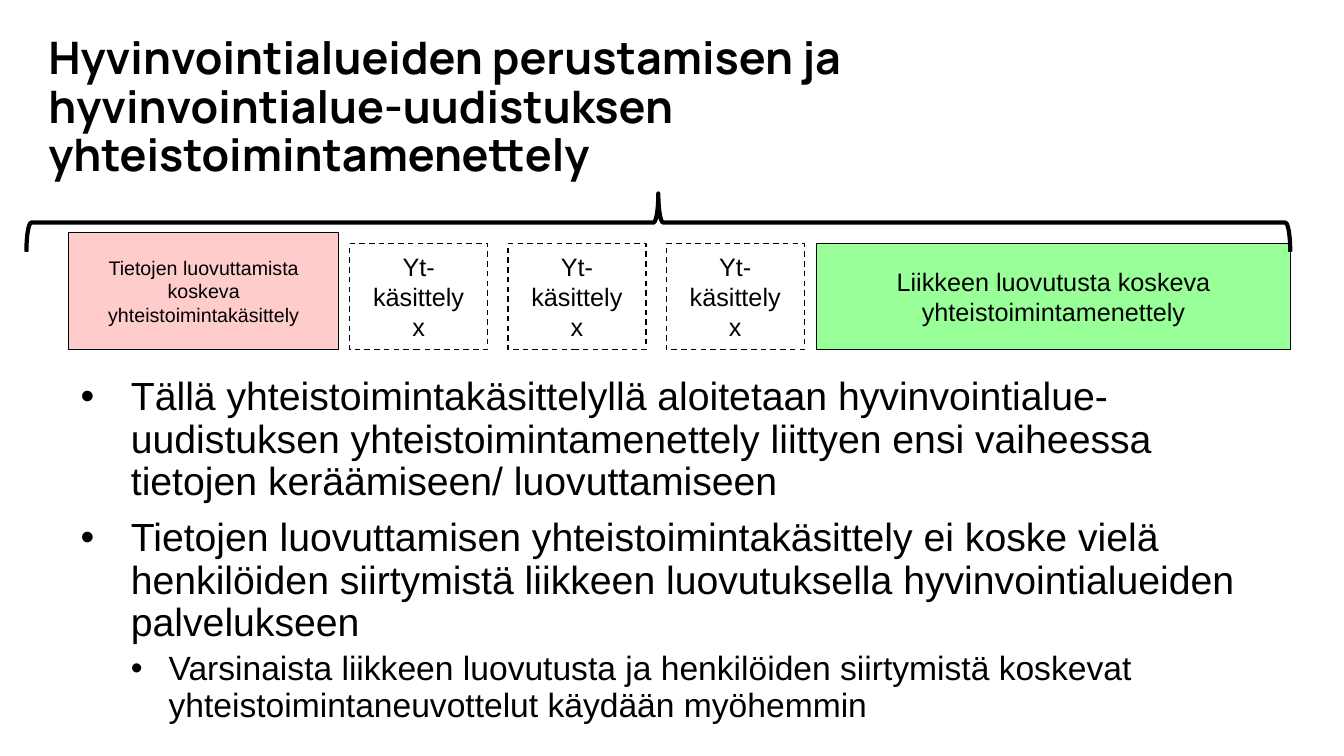
from lxml.etree import SubElement
from pptx import Presentation
from pptx.dml.color import RGBColor
from pptx.enum.dml import MSO_LINE
from pptx.enum.shapes import MSO_SHAPE
from pptx.enum.text import MSO_ANCHOR, PP_ALIGN
from pptx.oxml.ns import qn
from pptx.util import Cm, Pt

BLACK = RGBColor(0x00, 0x00, 0x00)
WHITE = RGBColor(0xFF, 0xFF, 0xFF)
PINK = RGBColor(0xFF, 0xCC, 0xCC)
GREEN = RGBColor(0x99, 0xFF, 0x99)

TITLE = "Hyvinvointialueiden perustamisen ja hyvinvointialue-uudistuksen yhteistoimintamenettely"
FIRST_STAGE = ["Tietojen luovuttamista koskeva yhteistoimintakäsittely"]
MIDDLE_STAGE = ["Yt-käsittely", "x"]
LAST_STAGE = ["Liikkeen luovutusta koskeva yhteistoimintamenettely"]
BULLETS = [
    (0, "Tällä yhteistoimintakäsittelyllä aloitetaan hyvinvointialue-uudistuksen "
        "yhteistoimintamenettely liittyen ensi vaiheessa tietojen keräämiseen/ luovuttamiseen"),
    (0, "Tietojen luovuttamisen yhteistoimintakäsittely ei koske vielä henkilöiden "
        "siirtymistä liikkeen luovutuksella hyvinvointialueiden palvelukseen"),
    (1, "Varsinaista liikkeen luovutusta ja henkilöiden siirtymistä koskevat "
        "yhteistoimintaneuvottelut käydään myöhemmin"),
]
BULLET_LEVELS = [
    {"size": 28, "before": 10, "margin": 1.27, "hanging": 1.27},
    {"size": 24, "before": 5, "margin": 2.22, "hanging": 0.95},
]

STAGE_BOTTOM = 8.81
STAGE_HEIGHT = 2.67
MIDDLE_COUNT = 3
MIDDLE_LEFT = 8.81
MIDDLE_WIDTH = 3.48
MIDDLE_PITCH = 3.99
BRACE_CENTER = (16.59, 5.61)
BRACE_DEPTH = 1.47
BRACE_LENGTH = 31.85


def add_run(paragraph, text, size, font="Arial", bold=False):
    run = paragraph.add_run()
    run.text = text
    run.font.name = font
    run.font.size = Pt(size)
    run.font.bold = bold
    run.font.color.rgb = BLACK


def add_text_frame(slide, left, top, width, height, anchor):
    box = slide.shapes.add_textbox(Cm(left), Cm(top), Cm(width), Cm(height))
    frame = box.text_frame
    frame.word_wrap = True
    frame.vertical_anchor = anchor
    return frame


def next_paragraph(frame, index):
    return frame.add_paragraph() if index else frame.paragraphs[0]


def add_stage(slide, left, width, height, lines, size, fill, dashed=False):
    shape = slide.shapes.add_shape(
        MSO_SHAPE.RECTANGLE, Cm(left), Cm(STAGE_BOTTOM - height), Cm(width), Cm(height))
    shape.shadow.inherit = False
    shape.fill.solid()
    shape.fill.fore_color.rgb = fill
    shape.line.color.rgb = BLACK
    shape.line.width = Pt(1)
    if dashed:
        shape.line.dash_style = MSO_LINE.DASH
    frame = shape.text_frame
    frame.word_wrap = True
    frame.vertical_anchor = MSO_ANCHOR.MIDDLE
    for index, line in enumerate(lines):
        paragraph = next_paragraph(frame, index)
        paragraph.alignment = PP_ALIGN.CENTER
        add_run(paragraph, line, size)


def add_brace(slide):
    center_x, center_y = BRACE_CENTER
    brace = slide.shapes.add_shape(
        MSO_SHAPE.LEFT_BRACE,
        Cm(center_x - BRACE_DEPTH / 2), Cm(center_y - BRACE_LENGTH / 2),
        Cm(BRACE_DEPTH), Cm(BRACE_LENGTH))
    brace.rotation = 90
    brace.shadow.inherit = False
    brace.fill.background()
    brace.line.color.rgb = BLACK
    brace.line.width = Pt(3)


def add_bullets(slide):
    frame = add_text_frame(slide, 1.78, 9.37, 30.18, 7.39, MSO_ANCHOR.TOP)
    for index, (level, text) in enumerate(BULLETS):
        style = BULLET_LEVELS[level]
        paragraph = next_paragraph(frame, index)
        paragraph.level = level
        paragraph.line_spacing = 0.9
        paragraph.space_before = Pt(style["before"])
        properties = paragraph._p.get_or_add_pPr()
        properties.set("marL", str(Cm(style["margin"])))
        properties.set("indent", str(-Cm(style["hanging"])))
        SubElement(properties, qn("a:buFont"), typeface="Arial")
        SubElement(properties, qn("a:buChar"), char="•")
        add_run(paragraph, text, style["size"])


def main():
    presentation = Presentation()
    presentation.slide_width = Cm(33.87)
    presentation.slide_height = Cm(19.05)
    slide = presentation.slides.add_slide(presentation.slide_layouts[6])

    add_stage(slide, 1.73, 6.81, 2.95, FIRST_STAGE, 14, PINK)
    for index in range(MIDDLE_COUNT):
        add_stage(slide, MIDDLE_LEFT + index * MIDDLE_PITCH, MIDDLE_WIDTH, STAGE_HEIGHT,
                  MIDDLE_STAGE, 18, WHITE, dashed=True)
    add_stage(slide, 20.57, 11.96, STAGE_HEIGHT, LAST_STAGE, 18, GREEN)
    add_brace(slide)

    title = add_text_frame(slide, 0.97, 1.42, 29.26, 2.64, MSO_ANCHOR.MIDDLE).paragraphs[0]
    title.line_spacing = 0.9
    add_run(title, TITLE, 32, "Manrope", True)
    add_bullets(slide)

    presentation.save("out.pptx")


if __name__ == "__main__":
    main()
